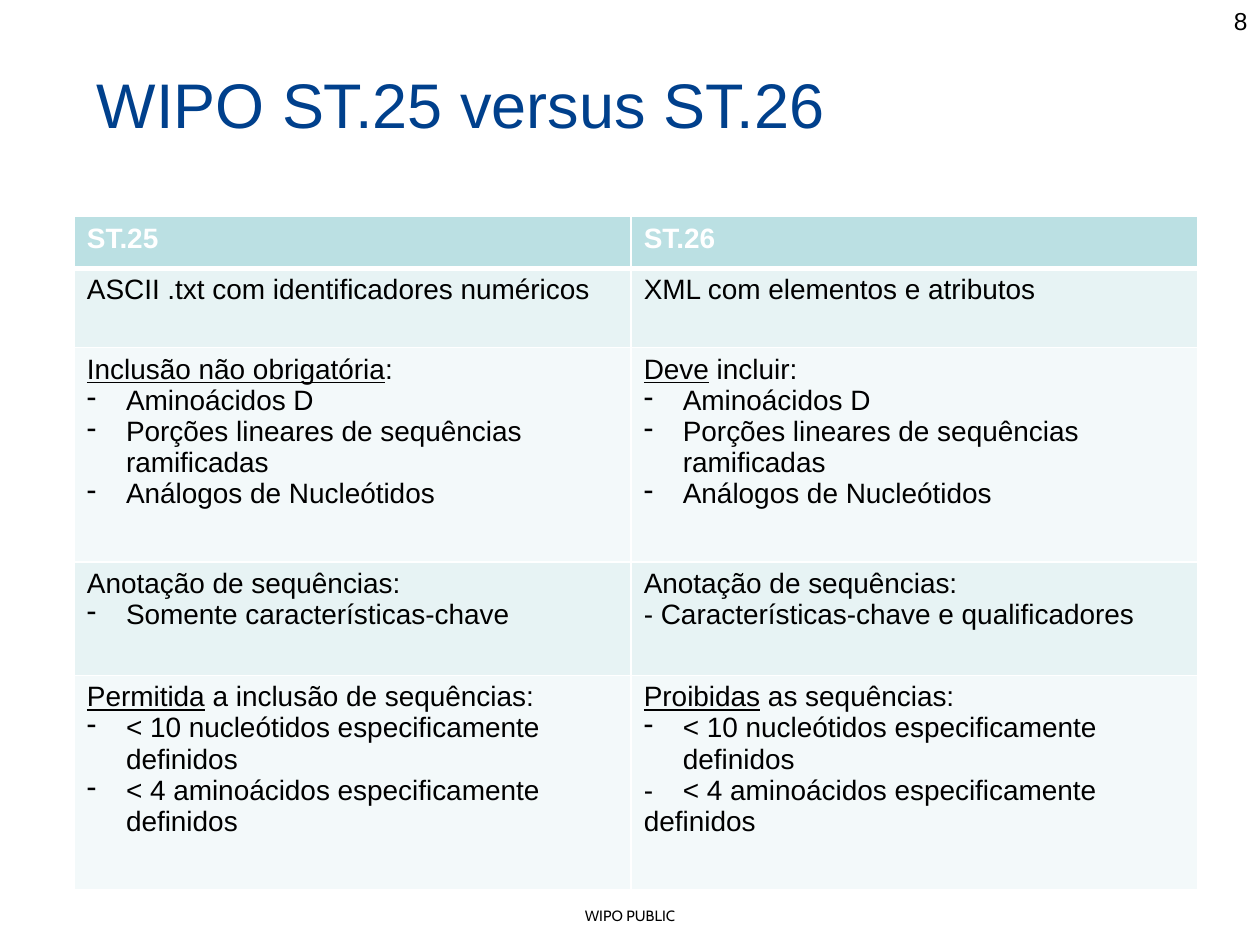
from dataclasses import dataclass

import pptx
import pptx.dml.color
import pptx.enum.text
import pptx.oxml.ns
import pptx.util
from lxml import etree

Inches = pptx.util.Inches
Pt = pptx.util.Pt
Align = pptx.enum.text.PP_ALIGN
qn = pptx.oxml.ns.qn


@dataclass(frozen=True)
class Theme:
    font: str = "Arial"
    footer_font: str = "Cabin"
    ink: str = "000000"
    white: str = "FFFFFF"
    title: str = "00408C"
    header: str = "BBE0E3"
    bands: tuple = ("E7F3F4", "F3F9FA")
    title_size: float = 36
    body_size: float = 16
    number_size: float = 14
    footer_size: float = 8.5
    grid_width: float = 1
    header_rule: float = 3
    hang: float = 0.31


THEME = Theme()

LEAD, BULLET, TABBED = "lead", "bullet", "tabbed"

HEADINGS = ("ST.25", "ST.26")
INCLUSIONS = [
    (BULLET, "", "Aminoácidos D"),
    (BULLET, "", "Porções lineares de sequências ramificadas"),
    (BULLET, "", "Análogos de Nucleótidos"),
]
ANNOTATION = (LEAD, "", "Anotação de sequências:")
NUCLEOTIDES = (BULLET, "", "< 10 nucleótidos especificamente definidos")
AMINO_ACIDS = "< 4 aminoácidos especificamente definidos"

COMPARISON = [
    (
        [(LEAD, "", "ASCII .txt com identificadores numéricos")],
        [(LEAD, "", "XML com elementos e atributos")],
    ),
    (
        [(LEAD, "Inclusão não obrigatória", ":")] + INCLUSIONS,
        [(LEAD, "Deve", " incluir:")] + INCLUSIONS,
    ),
    (
        [ANNOTATION, (BULLET, "", "Somente características-chave")],
        [ANNOTATION, (LEAD, "", "- Características-chave e qualificadores")],
    ),
    (
        [(LEAD, "Permitida", " a inclusão de sequências:"), NUCLEOTIDES,
         (BULLET, "", AMINO_ACIDS)],
        [(LEAD, "Proibidas", " as sequências:"), NUCLEOTIDES,
         (TABBED, "", "-\t" + AMINO_ACIDS)],
    ),
]
COLUMN_WIDTHS = (4.42, 4.5)
ROW_HEIGHTS = (0.41, 0.63, 1.7, 0.9, 1.7)


def rgb(value):
    return pptx.dml.color.RGBColor.from_string(value)


def add_run(paragraph, text, size, color, font=THEME.font, bold=False, underline=False):
    run = paragraph.add_run()
    run.text = text
    run.font.name = font
    run.font.size = Pt(size)
    run.font.bold = bold
    run.font.underline = underline
    run.font.color.rgb = rgb(color)


def add_line_of_text(slide, box, text, size, color, font=THEME.font, align=Align.LEFT):
    frame = slide.shapes.add_textbox(*map(Inches, box)).text_frame
    frame.word_wrap = True
    paragraph = frame.paragraphs[0]
    paragraph.alignment = align
    add_run(paragraph, text, size, color, font)


def indent_paragraph(paragraph, kind):
    properties = paragraph._p.get_or_add_pPr()
    hang = Inches(THEME.hang)
    if kind == BULLET:
        properties.set("marL", str(hang))
        properties.set("indent", str(-hang))
        etree.SubElement(properties, qn("a:buChar"), char="-")
    elif kind == TABBED:
        tabs = etree.SubElement(properties, qn("a:tabLst"))
        etree.SubElement(tabs, qn("a:tab"), pos=str(hang), algn="l")


def style_cell(cell, fill, top_width, bottom_width):
    properties = cell._tc.get_or_add_tcPr()
    widths = {"L": THEME.grid_width, "R": THEME.grid_width,
              "T": top_width, "B": bottom_width}
    for side, width in widths.items():
        border = etree.SubElement(properties, qn("a:ln" + side), w=str(Pt(width)))
        solid = etree.SubElement(border, qn("a:solidFill"))
        etree.SubElement(solid, qn("a:srgbClr"), val=THEME.white)
    cell.fill.solid()
    cell.fill.fore_color.rgb = rgb(fill)


def fill_cell(cell, points):
    frame = cell.text_frame
    for index, (kind, stressed, text) in enumerate(points):
        paragraph = frame.add_paragraph() if index else frame.paragraphs[0]
        indent_paragraph(paragraph, kind)
        if stressed:
            add_run(paragraph, stressed, THEME.body_size, THEME.ink, underline=True)
        add_run(paragraph, text, THEME.body_size, THEME.ink)


def add_comparison(slide, box):
    table = slide.shapes.add_table(
        len(ROW_HEIGHTS), len(COLUMN_WIDTHS), *map(Inches, box)).table
    table.first_row = False
    table.horz_banding = False
    for column, width in zip(table.columns, COLUMN_WIDTHS):
        column.width = Inches(width)
    for row, height in zip(table.rows, ROW_HEIGHTS):
        row.height = Inches(height)

    for cell, heading in zip(table.rows[0].cells, HEADINGS):
        style_cell(cell, THEME.header, THEME.grid_width, THEME.header_rule)
        add_run(cell.text_frame.paragraphs[0], heading,
                THEME.body_size, THEME.white, bold=True)

    for index, standards in enumerate(COMPARISON):
        top_width = THEME.grid_width if index else THEME.header_rule
        for cell, points in zip(table.rows[index + 1].cells, standards):
            style_cell(cell, THEME.bands[index % 2], top_width, THEME.grid_width)
            fill_cell(cell, points)


def add_footer(slide, box):
    add_line_of_text(slide, box, "WIPO PUBLIC", THEME.footer_size, THEME.ink,
                     THEME.footer_font, Align.CENTER)


def add_page_number(slide, box):
    add_line_of_text(slide, box, "8", THEME.number_size, THEME.ink, align=Align.RIGHT)


def add_title(slide, box):
    add_line_of_text(slide, box, "WIPO ST.25 versus ST.26",
                     THEME.title_size, THEME.title)


def main():
    deck = pptx.Presentation()
    deck.slide_width = Inches(10)
    deck.slide_height = Inches(7.5)
    slide = deck.slides.add_slide(deck.slide_layouts[6])
    add_footer(slide, (0, 7.15, 10, 0.24))
    add_page_number(slide, (7.67, 0, 2.33, 0.52))
    add_title(slide, (0.67, 0.47, 9, 1.25))
    add_comparison(slide, (0.59, 1.72, sum(COLUMN_WIDTHS), sum(ROW_HEIGHTS)))
    deck.save("out.pptx")


if __name__ == "__main__":
    main()
